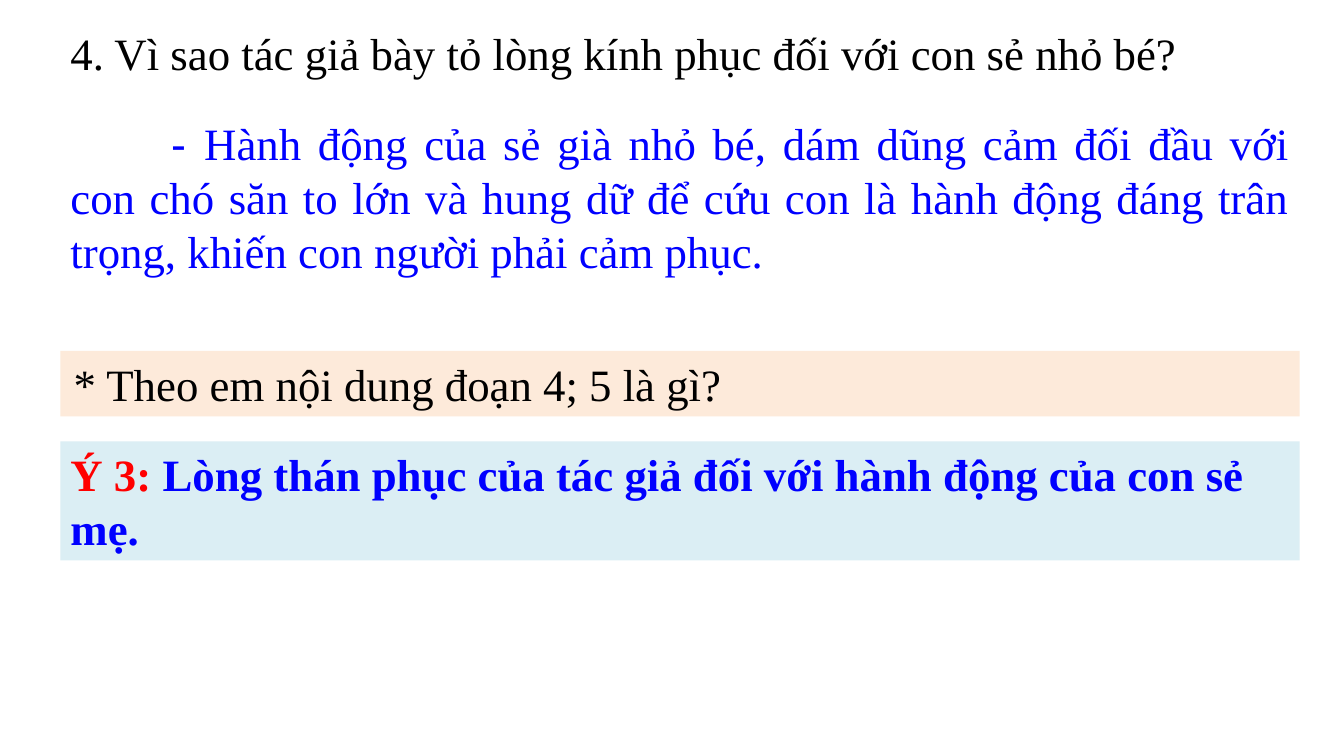
import pptx
import pptx.dml.color
import pptx.enum.shapes
import pptx.enum.text
import pptx.util
from pptx.dml.color import RGBColor
from pptx.util import Inches

BLACK = RGBColor(0x00, 0x00, 0x00)
BLUE = RGBColor(0x00, 0x00, 0xFF)
RED = RGBColor(0xFF, 0x00, 0x00)
PEACH = RGBColor(0xFD, 0xEA, 0xDA)
PALE_BLUE = RGBColor(0xDB, 0xEE, 0xF4)

LEFT = 0.6
WIDTH = 12.29


def add_text(paragraph, text, color=BLACK, font="Times New Roman", size=32, bold=False):
    run = paragraph.add_run()
    run.text = text
    run.font.name = font
    run.font.size = pptx.util.Pt(size)
    run.font.bold = bold
    run.font.color.rgb = color


def first_paragraph(box):
    frame = box.text_frame
    frame.word_wrap = True
    paragraph = frame.paragraphs[0]
    paragraph.alignment = pptx.enum.text.PP_ALIGN.LEFT
    return paragraph


def add_passage(slide, top, height):
    passage = slide.shapes.add_textbox(
        Inches(LEFT), Inches(top), Inches(WIDTH), Inches(height))
    return first_paragraph(passage)


def add_band(slide, top, height, fill, anchor, inset=None):
    band = slide.shapes.add_shape(
        pptx.enum.shapes.MSO_SHAPE.RECTANGLE,
        Inches(LEFT), Inches(top), Inches(WIDTH), Inches(height))
    band.shadow.inherit = False
    band.fill.solid()
    band.fill.fore_color.rgb = fill
    band.line.fill.background()
    frame = band.text_frame
    frame.vertical_anchor = anchor
    if inset is not None:
        frame.margin_left = frame.margin_right = Inches(inset)
        frame.margin_top = frame.margin_bottom = Inches(inset)
    return first_paragraph(band)


def main():
    deck = pptx.Presentation()
    deck.slide_width = Inches(13.33)
    deck.slide_height = Inches(7.5)
    slide = deck.slides.add_slide(deck.slide_layouts[6])
    anchors = pptx.enum.text.MSO_ANCHOR

    question = add_passage(slide, 0.21, 0.64)
    add_text(question, "4. Vì sao tác giả bày tỏ lòng kính phục đối với con sẻ nhỏ bé?")

    answer = add_passage(slide, 1.1, 1.72)
    answer.alignment = pptx.enum.text.PP_ALIGN.JUSTIFY
    answer_format = answer._p.get_or_add_pPr()
    answer_format.set("marL", "0")
    answer_format.set("indent", str(Inches(1)))
    add_text(answer, "- ", color=BLUE, font="Arial")
    add_text(answer, "Hành động của sẻ già nhỏ bé, dám dũng cảm đối đầu với con chó săn "
                     "to lớn và hung dữ để cứu con là hành động đáng trân trọng, "
                     "khiến con người phải cảm phục.", color=BLUE)

    prompt = add_band(slide, 3.48, 0.65, PEACH, anchors.MIDDLE, inset=0.13)
    add_text(prompt, "* Theo em nội dung đoạn 4; 5 là gì?")

    main_idea = add_band(slide, 4.38, 1.18, PALE_BLUE, anchors.TOP)
    add_text(main_idea, "Ý 3: ", color=RED, bold=True)
    add_text(main_idea, "Lòng thán phục của tác giả đối với hành động của con sẻ mẹ.",
             color=BLUE, bold=True)

    deck.save("out.pptx")


if __name__ == "__main__":
    main()
